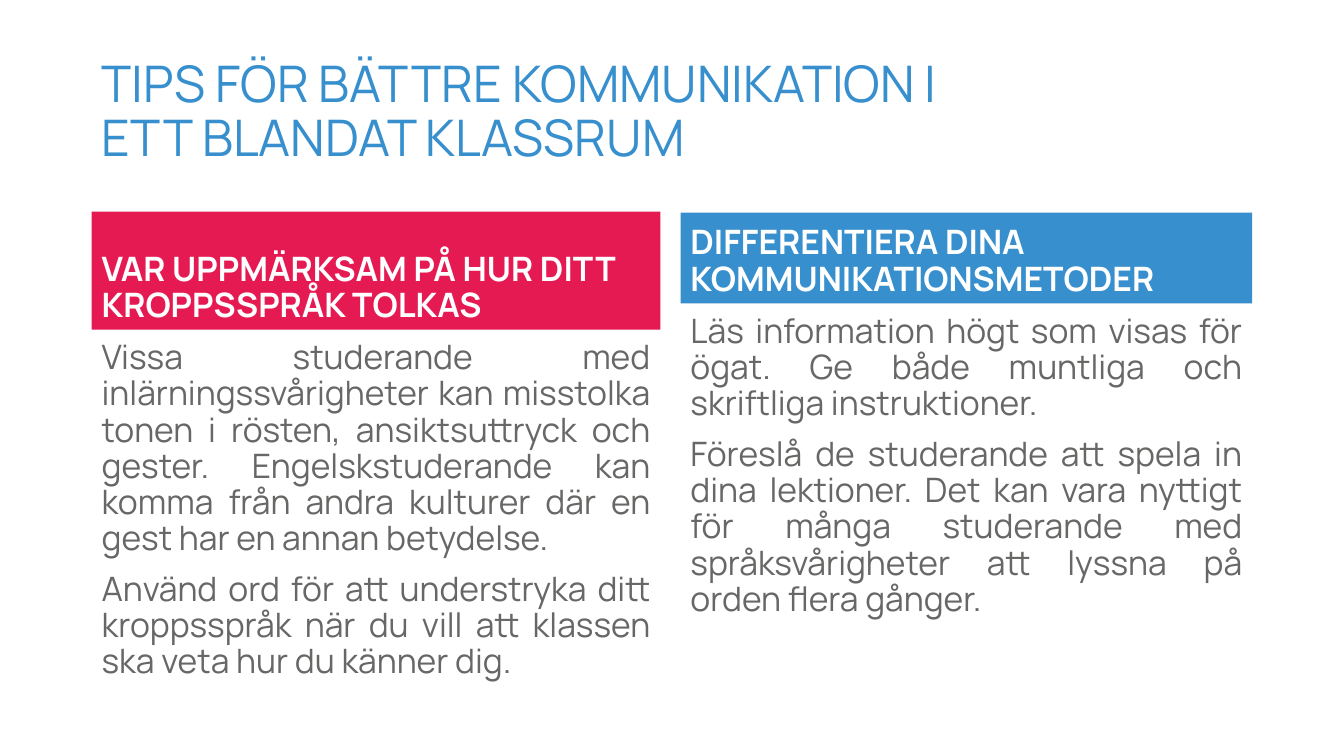
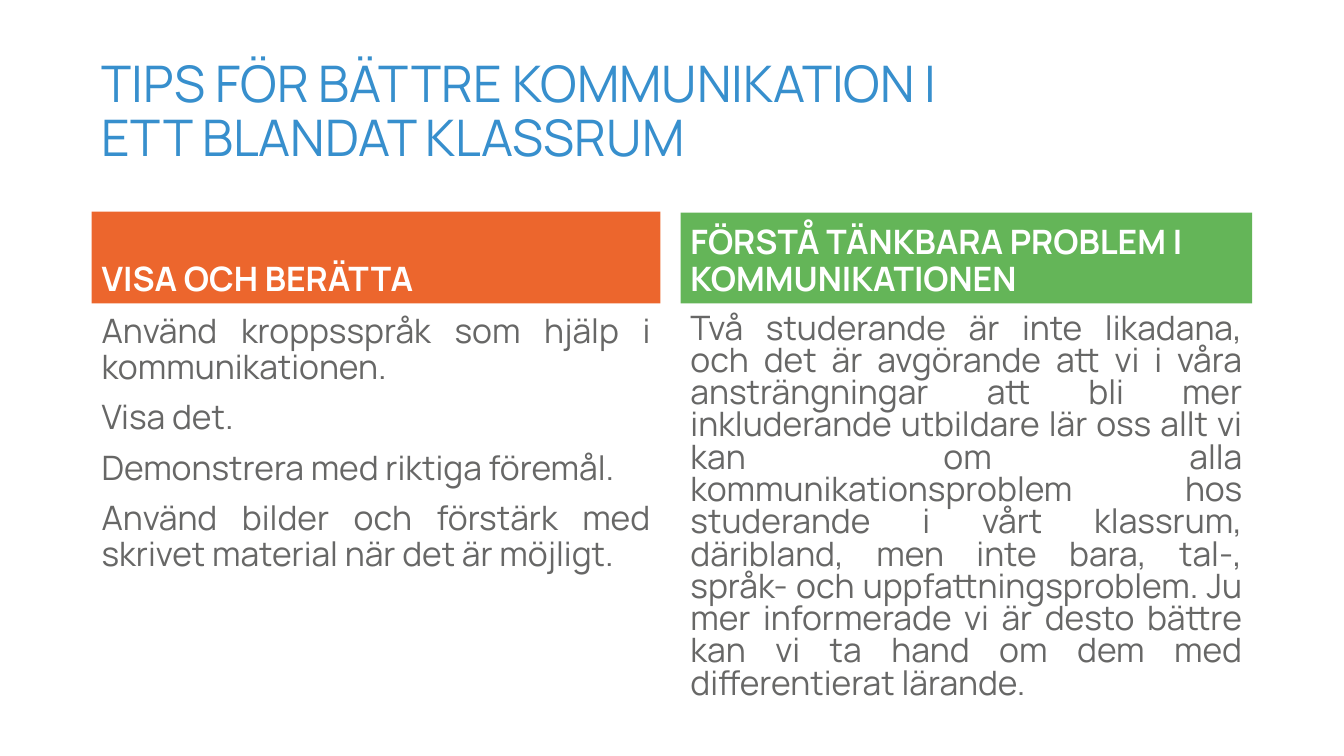
from pptx import Presentation
from pptx import util as u
from pptx.dml.color import RGBColor
from pptx.enum import shapes, text

FONT = "Manrope"
BLUE, RED, ORANGE, GREEN = "378FCD", "E61A52", "EC662D", "64B558"
GREY, WHITE = "676766", "FFFFFF"
TITLE = "TIPS FÖR BÄTTRE KOMMUNIKATION I ETT BLANDAT KLASSRUM"
COLS = [(0.91, 2.1, 5.64), (6.75, 2.11, 5.67)]  # left, top, width
GAP = 0.06  # between a band and the text below it
FOOT = 7.1  # lower edge of the text columns

# Each column: band colour, band height, heading, line spacing, paragraphs
SLIDES = [
    [
        (RED, 1.17, "VAR UPPMÄRKSAM PÅ HUR DITT KROPPSSPRÅK TOLKAS", 0.9, [
            "Vissa studerande med inlärningssvårigheter kan misstolka tonen i "
            "rösten, ansiktsuttryck och gester. Engelskstuderande kan komma "
            "från andra kulturer där en gest har en annan betydelse.",
            "Använd ord för att understryka ditt kroppsspråk när du vill att "
            "klassen ska veta hur du känner dig.",
        ]),
        (BLUE, 0.9, "DIFFERENTIERA DINA KOMMUNIKATIONSMETODER", 0.9, [
            "Läs information högt som visas för ögat. Ge både muntliga och "
            "skriftliga instruktioner.",
            "Föreslå de studerande att spela in dina lektioner. Det kan vara "
            "nyttigt för många studerande med språksvårigheter att lyssna på "
            "orden flera gånger.",
        ]),
    ],
    [
        (ORANGE, 0.91, "VISA OCH BERÄTTA", 0.9, [
            "Använd kroppsspråk som hjälp i kommunikationen.",
            "Visa det.",
            "Demonstrera med riktiga föremål.",
            "Använd bilder och förstärk med skrivet material när det är möjligt.",
        ]),
        (GREEN, 0.9, "FÖRSTÅ TÄNKBARA PROBLEM I KOMMUNIKATIONEN", 0.8, [
            "Två studerande är inte likadana, och det är avgörande att vi i "
            "våra ansträngningar att bli mer inkluderande utbildare lär oss "
            "allt vi kan om alla kommunikationsproblem hos studerande i vårt "
            "klassrum, däribland, men inte bara, tal-, språk- och "
            "uppfattningsproblem. Ju mer informerade vi är desto bättre kan "
            "vi ta hand om dem med differentierat lärande.",
        ]),
    ],
]


def paint(hue):
    return RGBColor.from_string(hue)


def write(shape, lines, size, hue, anchor, align, space=0.9, bold=False):
    """Fill a shape with one styled paragraph per line."""
    frame = shape.text_frame
    frame.text = "\n".join(lines)
    frame.word_wrap = True
    frame.auto_size = text.MSO_AUTO_SIZE.NONE
    frame.vertical_anchor = anchor
    for i, para in enumerate(frame.paragraphs):
        para.alignment = align
        para.line_spacing = space
        para.space_before = u.Pt(10 if i else 0)
        for run in para.runs:
            font = run.font
            font.name, font.size, font.bold = FONT, u.Pt(size), bold
            font.color.rgb = paint(hue)


deck = Presentation()
deck.slide_width, deck.slide_height = u.Inches(13.33), u.Inches(7.5)
LEFT, JUST = text.PP_ALIGN.LEFT, text.PP_ALIGN.JUSTIFY
TOP, MID, LOW = (text.MSO_ANCHOR.TOP, text.MSO_ANCHOR.MIDDLE,
                 text.MSO_ANCHOR.BOTTOM)

for cols in SLIDES:
    slide = deck.slides.add_slide(deck.slide_layouts[5])
    title = slide.shapes.title
    title.left, title.top = u.Inches(COLS[0][0]), u.Inches(0.4)
    title.width, title.height = u.Inches(9.36), u.Inches(1.45)
    write(title, [TITLE], 36, BLUE, MID, LEFT)

    for (left, top, width), (hue, high, head, space, lines) in zip(COLS, cols):
        band = slide.shapes.add_shape(
            shapes.MSO_SHAPE.RECTANGLE, u.Inches(left), u.Inches(top),
            u.Inches(width), u.Inches(high))
        band.shadow.inherit = False
        band.fill.solid()
        band.fill.fore_color.rgb = paint(hue)
        band.line.fill.background()
        write(band, [head], 24, WHITE, LOW, LEFT, bold=True)

        start = top + high + GAP
        body = slide.shapes.add_textbox(
            u.Inches(left), u.Inches(start), u.Inches(width),
            u.Inches(FOOT - start))
        write(body, lines, 24, GREY, TOP, JUST, space)

deck.save("out.pptx")
